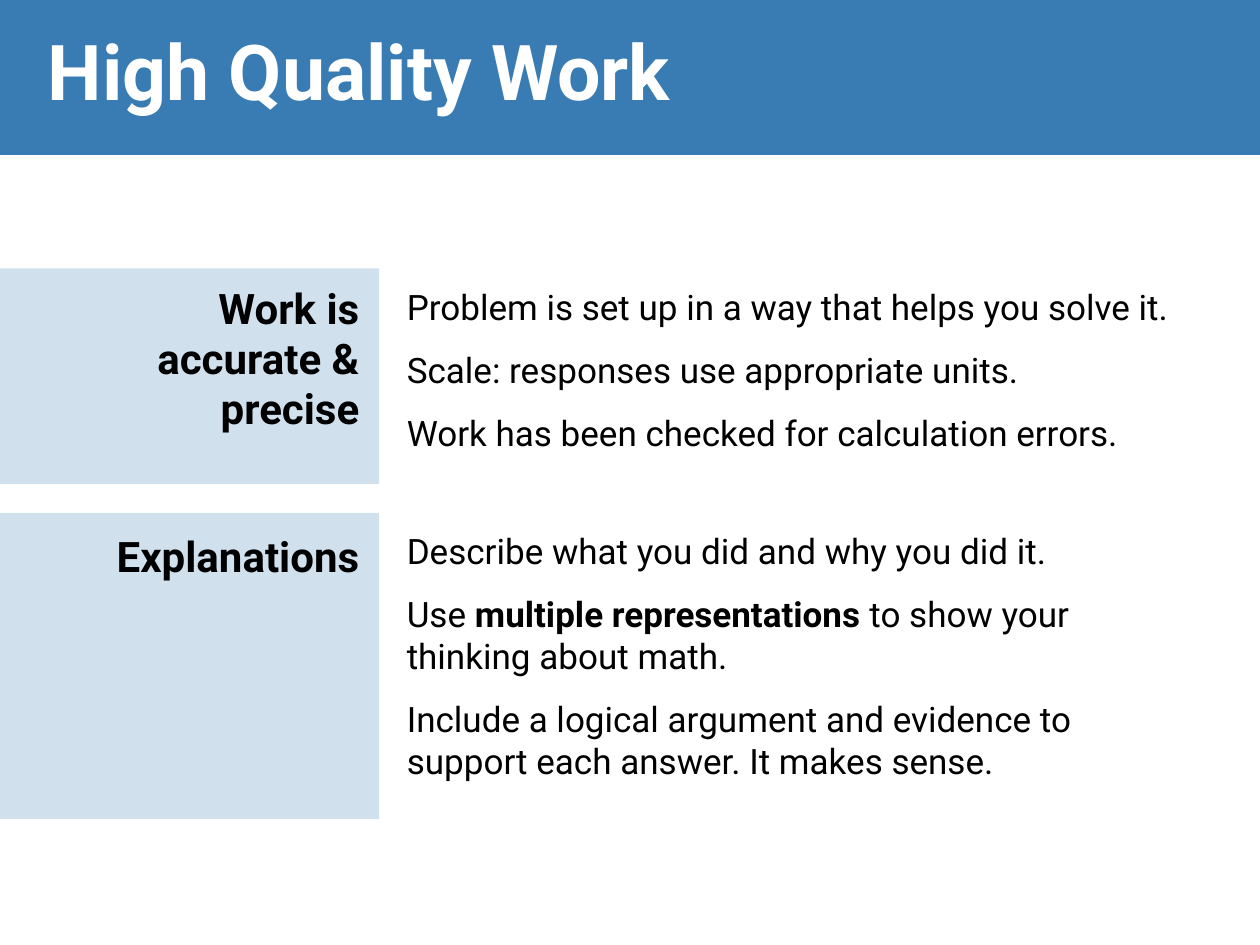
from lxml import etree
from pptx import Presentation
from pptx import util as u
from pptx.dml.color import RGBColor
from pptx.enum import shapes, text
from pptx.oxml import ns

BLUE = RGBColor(0x39, 0x7C, 0xB3)
WHITE = RGBColor(0xFF, 0xFF, 0xFF)
BLACK = RGBColor(0, 0, 0)
WIDTH, HEIGHT = u.Inches(10), u.Inches(7.5)
PANEL_SHARE = 0.301
TINT = 23

TITLE_FORMAT = {"name": "Roboto", "size": u.Pt(44), "bold": True}
LABEL_FORMAT = {"name": "Roboto", "size": u.Pt(24), "bold": True}
BODY_FORMAT = {"name": "Roboto", "size": u.Pt(20), "bold": False}
STRONG_FORMAT = {**BODY_FORMAT, "bold": True}
LABEL_PARAGRAPH = {"alignment": text.PP_ALIGN.RIGHT}
BODY_PARAGRAPH = {"alignment": text.PP_ALIGN.LEFT, "space_after": u.Pt(12)}

CRITERIA = [
    {
        "box": (0, u.Inches(2.13), WIDTH, u.Inches(1.71)),
        "label": "Work is accurate & precise",
        "label_drop": u.Inches(0.06),
        "body_drop": u.Inches(0.09),
        "body_width": 0.648,
        "points": [
            [("Problem is set up in a way that helps you solve it.", BODY_FORMAT)],
            [("Scale: responses use appropriate units.", BODY_FORMAT)],
            [("Work has been checked for calculation errors.", BODY_FORMAT)],
        ],
    },
    {
        "box": (0, u.Inches(4.07), WIDTH, u.Inches(2.43)),
        "label": "Explanations",
        "label_drop": u.Inches(0.09),
        "body_drop": u.Inches(0.08),
        "body_width": 0.595,
        "points": [
            [("Describe what you did and why you did it.", BODY_FORMAT)],
            [
                ("Use ", BODY_FORMAT),
                ("multiple representations ", STRONG_FORMAT),
                ("to show your thinking about math.", BODY_FORMAT),
            ],
            [("Include a logical argument and evidence to support each answer. "
              "It makes sense.", BODY_FORMAT)],
        ],
    },
]


def apply_format(target, values):
    for name, value in values.items():
        setattr(target, name, value)


def add_span(para, wording, values, color):
    span = para.add_run()
    span.text = wording
    apply_format(span.font, values)
    span.font.color.rgb = color


def add_block(page, box, opacity=100):
    block = page.shapes.add_shape(shapes.MSO_SHAPE.RECTANGLE, *box)
    block.shadow.inherit = False
    block.fill.solid()
    block.fill.fore_color.rgb = BLUE
    block.line.fill.background()
    if opacity < 100:
        color = block.element.spPr.find(".//" + ns.qn("a:srgbClr"))
        etree.SubElement(color, ns.qn("a:alpha"), val=str(opacity * 1000))


def add_text(page, box, paragraphs, values):
    frame = page.shapes.add_textbox(*box).text_frame
    frame.word_wrap = True
    for index, spans in enumerate(paragraphs):
        para = frame.add_paragraph() if index else frame.paragraphs[0]
        apply_format(para, values)
        for wording, font_values in spans:
            add_span(para, wording, font_values, BLACK)


def place_header(page, box, wording):
    left, top, width, height = box
    add_block(page, box)
    title = page.shapes.title
    title.element.getparent().append(title.element)
    apply_format(title, {
        "left": left + int(width * 0.028),
        "top": top,
        "width": int(width * 0.9),
        "height": u.Inches(1.1),
    })
    apply_format(title.text_frame, {
        "word_wrap": True,
        "vertical_anchor": text.MSO_ANCHOR.MIDDLE,
        "auto_size": text.MSO_AUTO_SIZE.NONE,
    })
    para = title.text_frame.paragraphs[0]
    para.alignment = text.PP_ALIGN.LEFT
    add_span(para, wording, TITLE_FORMAT, WHITE)


def place_criterion(page, criterion):
    left, top, width, height = criterion["box"]
    add_block(page, (left, top, int(width * PANEL_SHARE), height), TINT)
    label_box = (left + int(width * 0.042), top + criterion["label_drop"],
                 int(width * 0.253), u.Inches(1.01))
    add_text(page, label_box, [[(criterion["label"], LABEL_FORMAT)]], LABEL_PARAGRAPH)
    body_box = (left + int(width * 0.313), top + criterion["body_drop"],
                int(width * criterion["body_width"]), height)
    add_text(page, body_box, criterion["points"], BODY_PARAGRAPH)


def main():
    deck = Presentation()
    deck.slide_width, deck.slide_height = WIDTH, HEIGHT
    page = deck.slides.add_slide(deck.slide_layouts.get_by_name("Title Only"))
    place_header(page, (0, 0, WIDTH, u.Inches(1.23)), "High Quality Work")
    for criterion in CRITERIA:
        place_criterion(page, criterion)
    deck.save("out.pptx")


if __name__ == "__main__":
    main()
